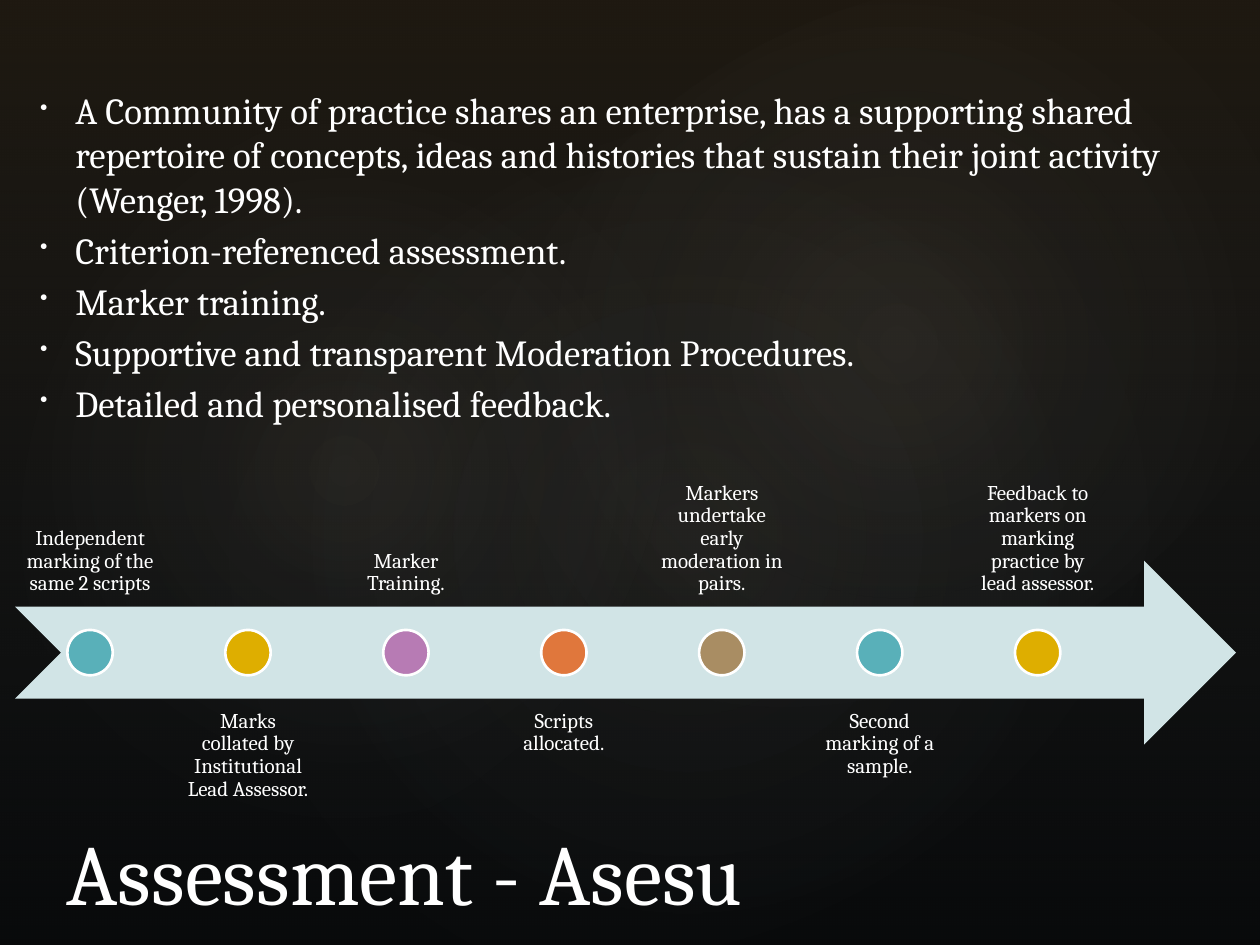
from lxml.etree import SubElement
from pptx import Presentation
from pptx.dml.color import RGBColor
from pptx.enum.shapes import MSO_SHAPE as Shape
from pptx.enum.text import MSO_ANCHOR as Anchor, PP_ALIGN as Align
from pptx.oxml import parse_xml
from pptx.oxml.ns import nsdecls, qn
from pptx.util import Inches, Pt

W, H = 10, 7.5
FONT = "Cambria"
COLORS = {
    "black": "000000", "white": "FFFFFF", "arrow": "D1E4E6",
    "brown": "564730", "slate": "5B6973", "sand": "CBBBA1",
    "teal": "59B0B9", "gold": "DEAE00", "mauve": "B77BB4",
    "orange": "E0773C", "tan": "A98D63",
}
GLOWS = [
    ((1.5, 1.14, 7.92, 6.24), 328.7, 7),
    ((-0.3, 1.28, 6.06, 4.9), 294.3, 8),
    ((3.58, 0.13, 7.09, 5.2), 328.7, 8),
]
BULLETS = [
    "A Community of practice shares an enterprise, has a supporting shared repertoire "
    "of concepts, ideas and histories that sustain their joint activity (Wenger, 1998).",
    "Criterion-referenced assessment.",
    "Marker training.",
    "Supportive and transparent Moderation Procedures.",
    "Detailed and personalised feedback.",
]
STEPS = [
    ("Independent marking of the same 2 scripts", "teal"),
    ("Marks collated by Institutional Lead Assessor.", "gold"),
    ("Marker Training.", "mauve"),
    ("Scripts allocated.", "orange"),
    ("Markers undertake early moderation in pairs.", "tan"),
    ("Second marking of a sample.", "teal"),
    ("Feedback to markers on marking practice by lead assessor.", "gold"),
]
ARROW = (0.12, 4.45, 9.69, 1.46)
COL_W, LABEL_W, DOT = 1.2535, 1.19, 0.36


def rgb(name):
    """Return the named colour."""
    return RGBColor.from_string(COLORS[name])


def add_shape(shapes, kind, box, fill=None, line=None):
    """Add a flat preset shape at a box in inches."""
    s = shapes.add_shape(kind, *map(Inches, box))
    s.shadow.inherit = False
    if fill:
        s.fill.solid()
        s.fill.fore_color.rgb = rgb(fill)
    if line:
        s.line.color.rgb = rgb(line)
        s.line.width = Pt(1.5)
    else:
        s.line.fill.background()
    return s


def set_gradient(s, stops, direction):
    """Fill a shape with a translucent gradient of (position, colour, opacity) stops."""
    gs = "".join(
        f'<a:gs pos="{pos * 1000}"><a:srgbClr val="{COLORS[name]}">'
        f'<a:alpha val="{alpha * 1000}"/></a:srgbClr></a:gs>'
        for pos, name, alpha in stops)
    grad = parse_xml(f'<a:gradFill {nsdecls("a")} rotWithShape="1">'
                     f'<a:gsLst>{gs}</a:gsLst>{direction}</a:gradFill>')
    s._element.spPr.find(qn("a:prstGeom")).addnext(grad)


def add_backdrop(slide):
    """Draw the dark background with its soft glows."""
    fill = slide.background.fill
    fill.solid()
    fill.fore_color.rgb = rgb("black")
    s = add_shape(slide.shapes, Shape.RECTANGLE, (0, 0, W, H))
    set_gradient(s, [(0, "brown", 36), (100, "slate", 10)], '<a:lin ang="5400000" scaled="0"/>')
    centre = ('<a:path path="circle"><a:fillToRect l="50000" t="50000" '
              'r="50000" b="50000"/></a:path>')
    for box, angle, alpha in GLOWS:
        s = add_shape(slide.shapes, Shape.OVAL, box)
        s.rotation = angle
        set_gradient(s, [(0, "sand", alpha), (58, "slate", 0)], centre)


def add_text(shapes, box, lines, size, anchor, align=Align.LEFT):
    """Add a wrapped text box with one paragraph per line."""
    tf = shapes.add_textbox(*map(Inches, box)).text_frame
    tf.word_wrap = True
    tf.vertical_anchor = anchor
    for i, line in enumerate(lines):
        p = tf.paragraphs[0] if i == 0 else tf.add_paragraph()
        p.alignment = align
        r = p.add_run()
        r.text = line
        r.font.name, r.font.size = FONT, Pt(size)
        r.font.color.rgb = rgb("white")
    return tf


def add_bullets(slide, box, lines):
    """Add the bulleted list."""
    tf = add_text(slide.shapes, box, lines, 21, Anchor.MIDDLE)
    for p in tf.paragraphs:
        p.space_before = Pt(4)
        pPr = p._p.get_or_add_pPr()
        pPr.set("marL", str(Inches(0.3)))
        pPr.set("indent", str(Inches(-0.28)))
        SubElement(pPr, qn("a:buSzPct")).set("val", "60000")
        SubElement(pPr, qn("a:buChar")).set("char", "•")


def add_step(shapes, i, text, color):
    """Add one step: a dot on the arrow and a label above or below it."""
    left, top, _, height = ARROW
    x, above = left + i * COL_W, i % 2 == 0
    y = top - 0.75 * height + (0 if above else 1.5 * height)
    tf = add_text(shapes, (x, y, LABEL_W, height), [text], 12,
                  Anchor.BOTTOM if above else Anchor.TOP, Align.CENTER)
    tf.margin_left = tf.margin_right = tf.margin_top = tf.margin_bottom = Inches(0.09)
    tf.paragraphs[0].line_spacing = 0.9
    dot = (x + (LABEL_W - DOT) / 2, top + (height - DOT) / 2, DOT, DOT)
    add_shape(shapes, Shape.OVAL, dot, color, "white")


def add_timeline(slide):
    """Add the arrow and its steps as one group."""
    shapes = slide.shapes.add_group_shape().shapes
    add_shape(shapes, Shape.NOTCHED_RIGHT_ARROW, ARROW, "arrow")
    for i, (text, color) in enumerate(STEPS):
        add_step(shapes, i, text, color)


def main():
    """Build and save the slide."""
    prs = Presentation()
    prs.slide_width, prs.slide_height = Inches(W), Inches(H)
    slide = prs.slides.add_slide(prs.slide_layouts[6])
    add_backdrop(slide)
    add_bullets(slide, (0.2, 0.13, 9.53, 3.81), BULLETS)
    add_text(slide.shapes, (0.43, 6.43, 8.25, 0.94), ["Assessment - Asesu"], 49, Anchor.BOTTOM)
    add_timeline(slide)
    prs.save("out.pptx")


if __name__ == "__main__":
    main()
